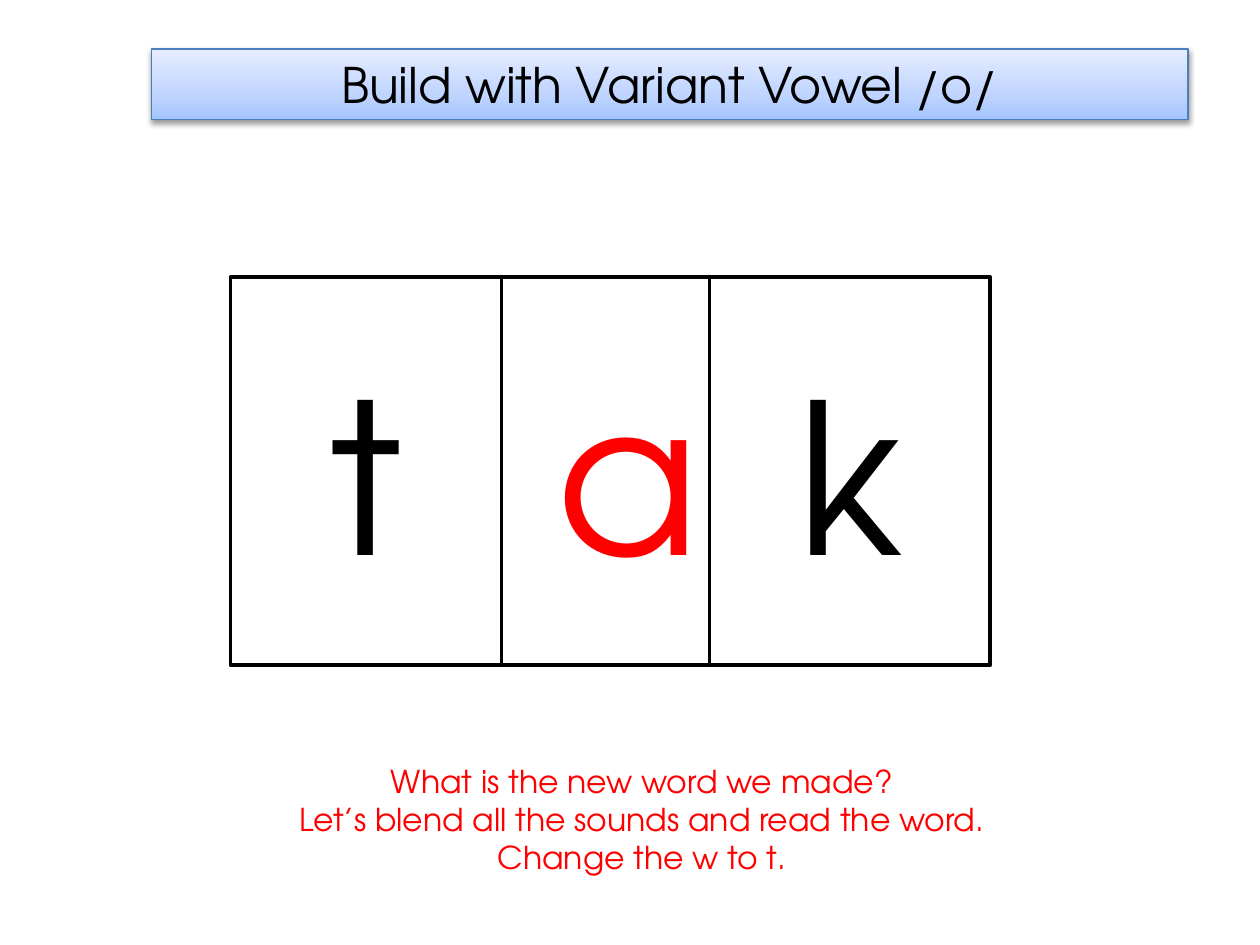
from copy import deepcopy
from dataclasses import dataclass

from lxml import etree
from pptx import Presentation
from pptx.dml.color import RGBColor
from pptx.enum.shapes import MSO_SHAPE
from pptx.enum.text import MSO_ANCHOR, MSO_AUTO_SIZE, PP_ALIGN
from pptx.oxml.ns import qn
from pptx.util import Inches, Pt

RECTANGLE = MSO_SHAPE.RECTANGLE
MIDDLE = MSO_ANCHOR.MIDDLE
TOP = MSO_ANCHOR.TOP
CENTER = PP_ALIGN.CENTER
FIT_SHAPE = MSO_AUTO_SIZE.SHAPE_TO_FIT_TEXT

SLIDE_WIDTH, SLIDE_HEIGHT = 10, 7.5


@dataclass(frozen=True)
class Theme:
    font: str = "TeX Gyre Adventor"
    ink: str = "000000"
    accent: str = "FF0000"
    paper: str = "FFFFFF"
    banner_line: str = "4B7EBC"
    banner_stops: tuple = ((0, "A4C4FF"), (0.35, "BFD4FF"), (1, "E6EEFF"))
    title_size: int = 28
    letter_size: int = 120
    prompt_size: int = 18


THEME = Theme()


def color(code):
    return RGBColor.from_string(code)


def write_text(shape, text, size, ink=THEME.ink, anchor=MIDDLE,
               insets=(0.1, 0.1)):
    """Write each line of text as a centred paragraph."""
    frame = shape.text_frame
    frame.word_wrap = True
    frame.vertical_anchor = anchor
    frame.margin_left, frame.margin_right = map(Inches, insets)
    frame.text = text
    for para in frame.paragraphs:
        para.alignment = CENTER
        for span in para.runs:
            span.font.name = THEME.font
            span.font.size = Pt(size)
            span.font.color.rgb = color(ink)


def add_panel(page, box, line, width):
    panel = page.shapes.add_shape(RECTANGLE, *map(Inches, box))
    panel.shadow.inherit = False
    panel.fill.solid()
    panel.fill.fore_color.rgb = color(THEME.paper)
    panel.line.color.rgb = color(line)
    panel.line.width = Pt(width)
    return panel


def fill_gradient(shape, stops):
    """Blend the stops from the bottom edge to the top."""
    shape.fill.gradient()
    shape.fill.gradient_angle = 90
    stop_list = shape._element.spPr.find(qn("a:gradFill")).find(qn("a:gsLst"))
    while len(stop_list) < len(stops):
        stop_list.append(deepcopy(stop_list[0]))
    for stop, (position, code) in zip(shape.fill.gradient_stops, stops):
        stop.position = position
        stop.color.rgb = color(code)


def add_drop_shadow(shape, blur, distance, opacity):
    effects = shape._element.spPr.find(qn("a:effectLst"))
    shadow = etree.SubElement(
        effects, qn("a:outerShdw"), blurRad=str(Pt(blur)),
        dist=str(Pt(distance)), dir="5400000", rotWithShape="0")
    shade = etree.SubElement(shadow, qn("a:srgbClr"), val=THEME.ink)
    etree.SubElement(shade, qn("a:alpha"), val=str(opacity * 1000))


def add_banner(page, box, title):
    banner = add_panel(page, box, THEME.banner_line, 0.75)
    fill_gradient(banner, THEME.banner_stops)
    add_drop_shadow(banner, blur=3.1, distance=1.6, opacity=38)
    write_text(banner, title, THEME.title_size)


def add_sound_cards(page, box, cards):
    """Set cards side by side, with widths in proportion to their columns."""
    left, top, width, height = box
    unit = width / sum(columns for _, columns, _, _ in cards)
    for sound, columns, ink, insets in cards:
        card = add_panel(page, (left, top, columns * unit, height),
                         THEME.ink, 2)
        write_text(card, sound, THEME.letter_size, ink=ink, insets=insets)
        left += columns * unit


def add_prompt(page, box, lines):
    prompt = page.shapes.add_textbox(*map(Inches, box))
    write_text(prompt, "\n".join(lines), THEME.prompt_size,
               ink=THEME.accent, anchor=TOP)
    prompt.text_frame.auto_size = FIT_SHAPE


def main():
    deck = Presentation()
    deck.slide_width = Inches(SLIDE_WIDTH)
    deck.slide_height = Inches(SLIDE_HEIGHT)
    page = deck.slides.add_slide(deck.slide_layouts[6])

    # Title banner
    add_banner(page, (1.2, 0.39, 8.23, 0.56), "Build with Variant Vowel /o/")

    # Sound cards: the vowel sits right of its card's centre
    add_sound_cards(page, (1.83, 2.2, 6.03, 3.08), (
        ("t", 2.15, THEME.ink, (0.1, 0.1)),
        ("a", 1.65, THEME.accent, (0.36, 0)),
        ("k", 2.23, THEME.ink, (0.1, 0.1)),
    ))

    # Teacher prompt
    add_prompt(page, (1.61, 6, 6.97, 1.01), (
        "What is the new word we made?",
        "Let’s blend all the sounds and read the word.",
        "Change the w to t.",
    ))

    deck.save("out.pptx")


if __name__ == "__main__":
    main()
